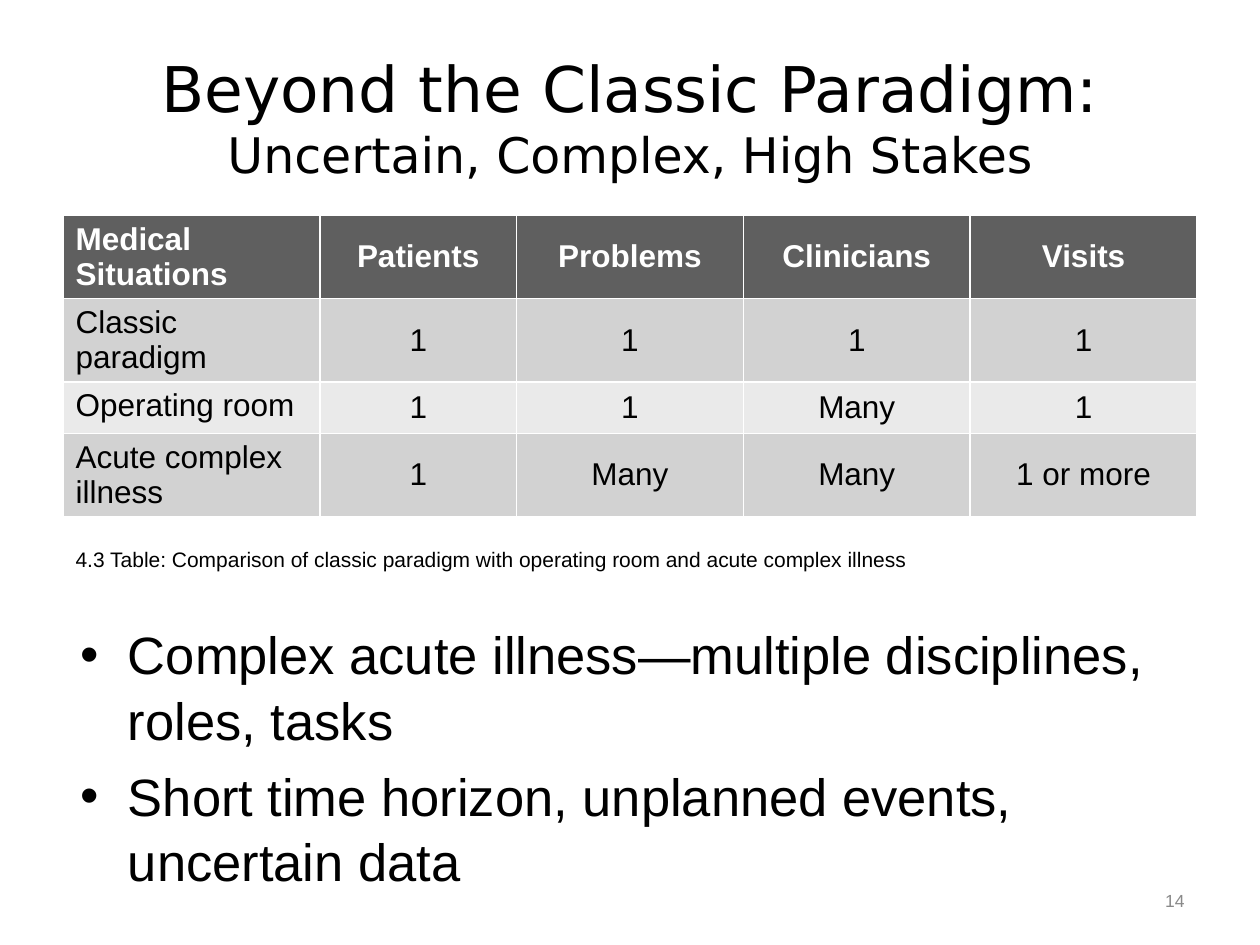
from pptx import Presentation
from pptx import util as u
from pptx.dml.color import RGBColor
from pptx.enum import text
from lxml import etree

THEME = {
    "title_face": "DejaVu Sans", "face": "Arial",
    "title": 36, "subtitle": 28, "body": 30, "cell": 18, "caption": 12, "number": 10,
    "ink": "000000", "white": "FFFFFF", "grey": "898989",
    "header": "5F5F5F", "bands": ("D2D2D2", "EAEAEA"),
}


def write(p, words, size, color="ink", face="face", bold=False):
    """Add a run to p, styled by names from THEME."""
    r = p.add_run()
    r.text = words
    r.font.size = u.Pt(THEME[size])
    r.font.name = THEME[face]
    r.font.bold = bold
    r.font.color.rgb = RGBColor.from_string(THEME[color])


def place(sp, left, top, width, height):
    sp.left, sp.top, sp.width, sp.height = map(u.Inches, (left, top, width, height))


prs = Presentation()
prs.slide_width, prs.slide_height = u.Inches(10), u.Inches(7.5)
s = prs.slides.add_slide(prs.slide_layouts.get_by_name("Two Content"))
title, caption, points = s.placeholders
MARGIN, WIDTH = 0.5, 9

# Title
place(title, MARGIN, 0.3, WIDTH, 1.25)
title.text_frame.auto_size = text.MSO_AUTO_SIZE.NONE
title.text_frame.vertical_anchor = text.MSO_ANCHOR.MIDDLE
p = title.text_frame.paragraphs[0]
p.alignment = text.PP_ALIGN.CENTER
write(p, "Beyond the Classic Paradigm:", "title", face="title_face")
p.add_line_break()
write(p, "Uncertain, Complex, High Stakes", "subtitle", face="title_face")

# Comparison table
rows = [
    ("Medical Situations", "Patients", "Problems", "Clinicians", "Visits"),
    ("Classic paradigm", "1", "1", "1", "1"),
    ("Operating room", "1", "1", "Many", "1"),
    ("Acute complex illness", "1", "Many", "Many", "1 or more"),
]
col_widths = (2.04, 1.56, 1.8, 1.8, 1.8)
ROW_HEIGHT = 0.41
table = s.shapes.add_table(
    len(rows), len(col_widths), u.Inches(MARGIN), u.Inches(1.71),
    u.Inches(WIDTH), u.Inches(ROW_HEIGHT * len(rows))).table
for col, width in zip(table.columns, col_widths):
    col.width = u.Inches(width)
for i, row in enumerate(rows):
    fill = THEME["bands"][(i - 1) % 2] if i else THEME["header"]
    for j, words in enumerate(row):
        cell = table.cell(i, j)
        cell.fill.solid()
        cell.fill.fore_color.rgb = RGBColor.from_string(fill)
        p = cell.text_frame.paragraphs[0]
        if j:
            cell.vertical_anchor = text.MSO_ANCHOR.MIDDLE
            p.alignment = text.PP_ALIGN.CENTER
        write(p, words, "cell", "ink" if i else "white", bold=i == 0)

# Caption, without the placeholder's bullet
place(caption, MARGIN, 4.29, 7.75, 0.58)
caption.text_frame.auto_size = text.MSO_AUTO_SIZE.NONE
p = caption.text_frame.paragraphs[0]
write(p, "4.3 Table: Comparison of classic paradigm with operating room "
         "and acute complex illness", "caption")
pPr = p._p.get_or_add_pPr()
pPr.set("marL", "0")
pPr.set("indent", "0")
etree.SubElement(pPr, "{http://schemas.openxmlformats.org/drawingml/2006/main}buNone")

# Bullet points
place(points, 0.54, 4.87, 8.92, 2.46)
tf = points.text_frame
tf.auto_size = text.MSO_AUTO_SIZE.NONE
for i, words in enumerate((
        "Complex acute illness—multiple disciplines, roles, tasks",
        "Short time horizon, unplanned events, uncertain data")):
    p = tf.add_paragraph() if i else tf.paragraphs[0]
    p.line_spacing = 1.04
    write(p, words, "body")

# Slide number
number = s.shapes.add_textbox(0, 0, 0, 0)
place(number, 8.94, 6.85, 0.56, 0.6)
tf = number.text_frame
tf.word_wrap = True
tf.vertical_anchor = text.MSO_ANCHOR.MIDDLE
p = tf.paragraphs[0]
p.alignment = text.PP_ALIGN.RIGHT
write(p, "14", "number", "grey")

prs.save("out.pptx")
